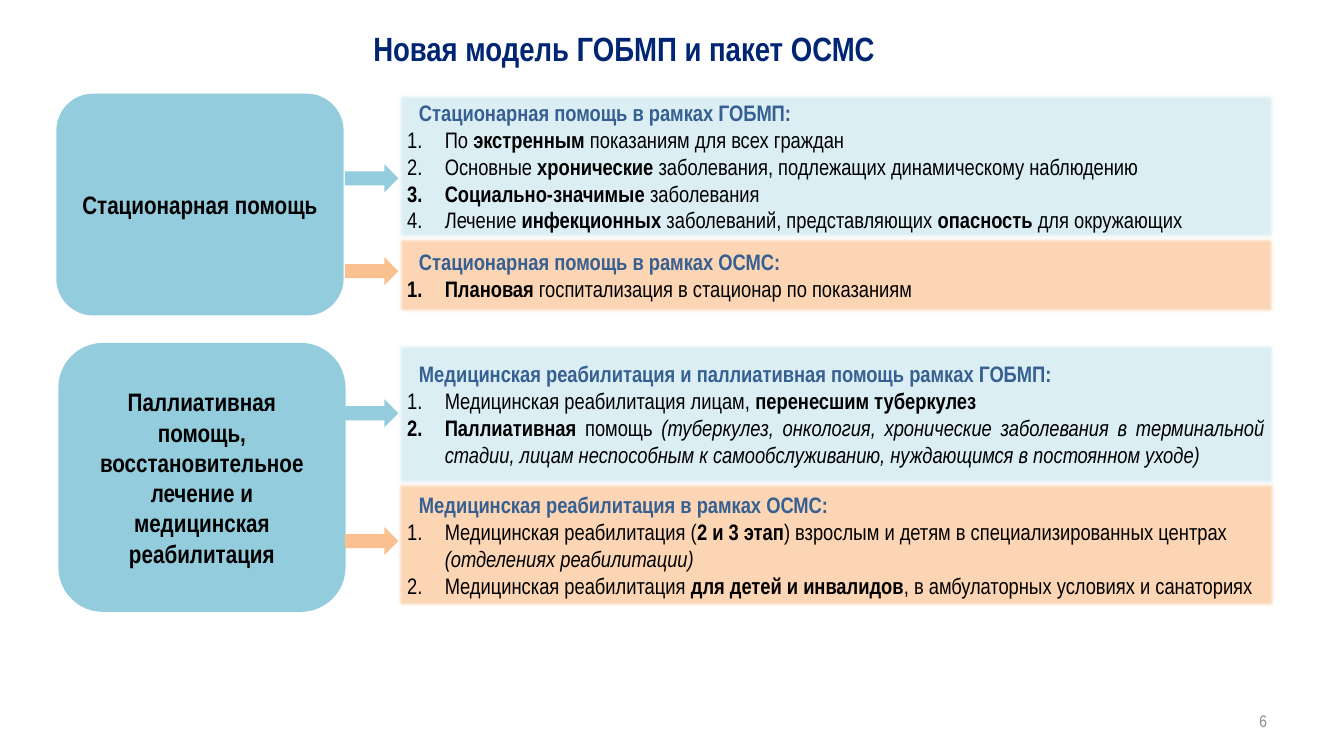
from lxml import etree
from pptx import Presentation
from pptx import util as u
from pptx.dml.color import RGBColor
from pptx.enum import shapes, text
from pptx.oxml import ns

FONT = "Arial Narrow"
COLORS = {
    "title": "002673", "heading": "376092", "body": "000000", "number": "8C8C8C",
    "blue": "93CDDD", "pale_blue": "DBEEF4", "orange": "FAC090", "pale_orange": "FCD5B5",
}
LEFT, CENTER, RIGHT, JUSTIFY = (text.PP_ALIGN.LEFT, text.PP_ALIGN.CENTER,
                                text.PP_ALIGN.RIGHT, text.PP_ALIGN.JUSTIFY)
PANEL_LEFT, PANEL_WIDTH = 10.01, 22.12
ARROW_LEFT, ARROW_WIDTH, ARROW_HEIGHT = 8.69, 1.35, 0.71
NUMBER_INDENT = 0.95

# Each service: name, box (left, top, width, height), then its panels.
# Each panel: fill, arrow colour, top, height, arrow top, heading, list alignment, items.
# Each item is a list of (text, style), where style is "", "b" or "i".
SERVICES = [
    ("Стационарная помощь", (1.42, 2.36, 7.24, 5.59), [
        ("pale_blue", "blue", 2.36, 3.66, 4.14, "Стационарная помощь в рамках ГОБМП:", JUSTIFY, [
            [("По ", ""), ("экстренным", "b"), (" показаниям для всех граждан", "")],
            [("Основные ", ""), ("хронические", "b"),
             (" заболевания, подлежащих динамическому наблюдению", "")],
            [("Социально-значимые", "b"), (" заболевания", "")],
            [("Лечение ", ""), ("инфекционных", "b"), (" заболеваний, представляющих ", ""),
             ("опасность", "b"), (" для окружающих", "")],
        ]),
        ("pale_orange", "orange", 5.97, 1.93, 6.48, "Стационарная помощь в рамках ОСМС:", JUSTIFY, [
            [("Плановая", "b"), (" госпитализация в стационар по показаниям", "")],
        ]),
    ]),
    ("Паллиативная помощь, восстановительное лечение и медицинская реабилитация",
     (1.47, 8.64, 7.24, 6.78), [
        ("pale_blue", "blue", 8.66, 3.56, 10.06,
         "Медицинская реабилитация и паллиативная помощь рамках ГОБМП:", JUSTIFY, [
             [("Медицинская реабилитация лицам, ", ""), ("перенесшим туберкулез", "b")],
             [("Паллиативная", "b"), (" помощь ", ""),
              ("(туберкулез, онкология, хронические заболевания в терминальной стадии, "
               "лицам неспособным к самообслуживанию, нуждающимся в постоянном уходе)", "i")],
         ]),
        ("pale_orange", "orange", 12.17, 3.12, 13.28,
         "Медицинская реабилитация в рамках ОСМС:", LEFT, [
             [("Медицинская реабилитация (", ""), ("2 и 3 этап", "b"),
              (") взрослым и детям в специализированных центрах ", ""),
              ("(отделениях реабилитации)", "i")],
             [("Медицинская реабилитация ", ""), ("для детей и инвалидов", "b"),
              (", в амбулаторных условиях и санаториях", "")],
         ]),
    ]),
]


def rgb(name):
    return RGBColor.from_string(COLORS[name])


def write(paragraph, content, size=16, color="body", bold=False, italic=False, align=None):
    """Add one formatted run to a paragraph."""
    run = paragraph.add_run()
    run.text = content
    font = run.font
    font.name, font.size, font.bold, font.italic = FONT, u.Pt(size), bold, italic
    font.color.rgb = rgb(color)
    if align is not None:
        paragraph.alignment = align


def indent(paragraph, margin, numbered=False):
    properties = paragraph._p.get_or_add_pPr()
    properties.set("marL", str(u.Cm(margin)))
    properties.set("indent", str(-u.Cm(margin) if numbered else 0))
    if numbered:
        etree.SubElement(properties, ns.qn("a:buFont"), typeface="+mj-lt")
        etree.SubElement(properties, ns.qn("a:buAutoNum"), type="arabicPeriod")


def middle_frame(shape):
    frame = shape.text_frame
    frame.word_wrap = True
    frame.vertical_anchor = text.MSO_ANCHOR.MIDDLE
    return frame


def add_label(slide, box, content, **style):
    shape = slide.shapes.add_textbox(*map(u.Cm, box))
    write(middle_frame(shape).paragraphs[0], content, **style)


def add_block(slide, kind, box, fill):
    shape = slide.shapes.add_shape(kind, *map(u.Cm, box))
    shape.shadow.inherit = False
    shape.fill.solid()
    shape.fill.fore_color.rgb = rgb(fill)
    shape.line.fill.background()
    return shape


def soften_edges(shape):
    effects = shape._element.spPr.find(ns.qn("a:effectLst"))
    etree.SubElement(effects, ns.qn("a:softEdge"), rad=str(u.Pt(2.5)))


def add_panel(slide, fill, top, height, heading, align, items):
    panel = add_block(slide, shapes.MSO_SHAPE.RECTANGLE,
                      (PANEL_LEFT, top, PANEL_WIDTH, height), fill)
    soften_edges(panel)
    frame = middle_frame(panel)
    paragraph = frame.paragraphs[0]
    write(paragraph, heading, color="heading", bold=True, align=LEFT)
    paragraph.space_before = u.Pt(12)
    indent(paragraph, 0.3)
    for item in items:
        paragraph = frame.add_paragraph()
        for content, style in item:
            write(paragraph, content, bold=style == "b", italic=style == "i", align=align)
        indent(paragraph, NUMBER_INDENT, numbered=True)


def add_service(slide, name, box, panels):
    service = add_block(slide, shapes.MSO_SHAPE.ROUNDED_RECTANGLE, box, "blue")
    write(middle_frame(service).paragraphs[0], name, size=18, bold=True, align=CENTER)
    for fill, arrow_color, top, height, arrow_top, heading, align, items in panels:
        add_panel(slide, fill, top, height, heading, align, items)
        add_block(slide, shapes.MSO_SHAPE.RIGHT_ARROW,
                  (ARROW_LEFT, arrow_top, ARROW_WIDTH, ARROW_HEIGHT), arrow_color)


def main():
    presentation = Presentation()
    presentation.slide_width, presentation.slide_height = u.Cm(33.87), u.Cm(19.05)
    slide = presentation.slides.add_slide(presentation.slide_layouts[6])

    # Title and page number
    add_label(slide, (1.14, 0.56, 28.98, 1.32), " Новая модель ГОБМП и пакет ОСМС",
              size=24, color="title", bold=True, align=CENTER)
    add_label(slide, (24.28, 17.65, 7.9, 1.02), "6", size=12, color="number", align=RIGHT)

    # Services with their panels and arrows
    for name, box, panels in SERVICES:
        add_service(slide, name, box, panels)

    presentation.save("out.pptx")


if __name__ == "__main__":
    main()
